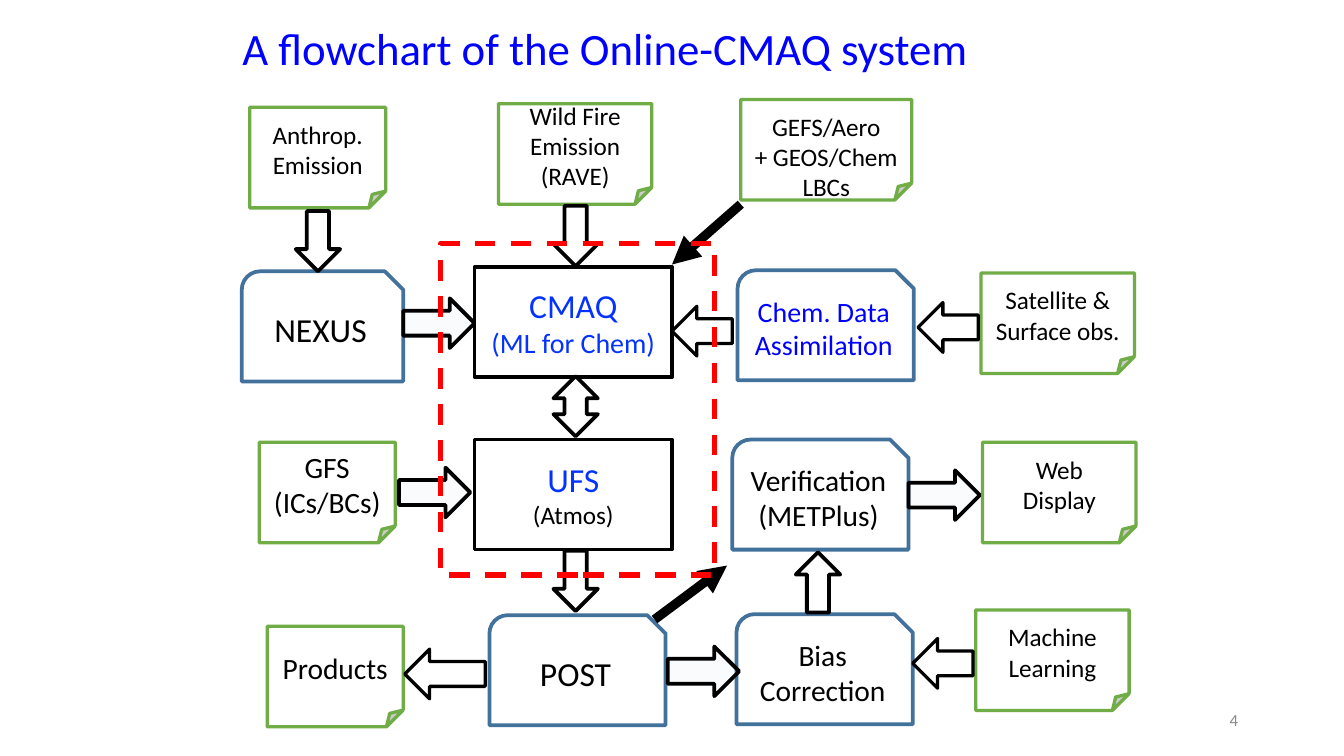
from lxml import etree
from pptx import Presentation
from pptx import util as u
from pptx.dml import color
from pptx.enum import dml, shapes, text
from pptx.oxml import ns

COLORS = {
    "black": "000000",
    "white": "FFFFFF",
    "blue": "0000FF",
    "core_blue": "0432FF",
    "process": "42719B",
    "data": "70AD47",
    "tint": "5B9BD5",
    "boundary": "FF0000",
    "number": "888888",
}
FONT = "Calibri"
SHAPE = shapes.MSO_SHAPE
CENTER = text.PP_ALIGN.CENTER
CORE_SIZE = (3.73, 2.08)
PROCESS_SIZE = (3.33, 2.08)
NARROW, WIDE, NOTE_HEIGHT = 2.57, 2.9, 1.9
VERTICAL_ARROW = (0.84, 1.14)
RIGHT_ARROW = (1.35, 0.94)
LEFT_ARROW = (1.14, 0.94)

CORE_BOXES = [
    ((8.97, 5.05), [("CMAQ", 18, "core_blue"), ("(ML for Chem)", 15, "core_blue")]),
    ((8.97, 8.31), [("UFS", 18, "core_blue"), ("(Atmos)", 13.5, "black")]),
]
PROCESSES = [
    ((4.57, 5.13), (3.05, 2.08), ["NEXUS"], 18, "black"),
    ((13.94, 5.11), PROCESS_SIZE, ["Chem. Data Assimilation"], 15, "blue"),
    ((13.84, 8.31), PROCESS_SIZE, ["Verification", "(METPlus)"], 15.75, "black"),
    ((9.25, 11.63), PROCESS_SIZE, ["POST"], 18, "black"),
    ((13.92, 11.61), PROCESS_SIZE, ["Bias Correction"], 15.75, "black"),
]
NOTES = [
    ((4.72, 2.03), NARROW, ["Anthrop.", "Emission"], 13.5, 0.1),
    ((9.42, 1.96), WIDE, ["Wild Fire", "Emission", "(RAVE)"], 13.5, 0.1),
    ((14, 1.88), 3.23, ["GEFS/Aero", "+ GEOS/Chem", "LBCs"], 13.5, 0.68),
    ((18.54, 5.16), WIDE, ["Satellite &", "Surface obs."], 13.5, 0.1),
    ((4.9, 8.36), NARROW, ["GFS", "(ICs/BCs)"], 15.75, 0.1),
    ((18.57, 8.36), WIDE, ["Web", "Display"], 13.5, 0.1),
    ((5.05, 11.84), NARROW, ["Products"], 15.75, 0.1),
    ((18.44, 11.53), WIDE, ["Machine Learning"], 13.5, 0.1),
]
BLOCK_ARROWS = [
    (SHAPE.DOWN_ARROW, VERTICAL_ARROW, 2, None, [(5.59, 3.99), (10.46, 3.89), (10.46, 10.41)]),
    (SHAPE.UP_ARROW, VERTICAL_ARROW, 2, None, [(15.04, 10.44)]),
    (SHAPE.UP_DOWN_ARROW, VERTICAL_ARROW, 2, "white", [(10.46, 7.11)]),
    (SHAPE.RIGHT_ARROW, RIGHT_ARROW, 2, "tint",
     [(7.62, 5.64), (7.54, 8.84), (17.17, 8.89), (12.62, 12.22)]),
    (SHAPE.LEFT_ARROW, LEFT_ARROW, 1.75, None, [(12.7, 5.79), (17.35, 5.72), (17.25, 12.07)]),
    (SHAPE.LEFT_ARROW, (1.52, 0.94), 1.75, None, [(7.65, 12.27)]),
]
THICK_ARROWS = [((14, 3.86), (12.7, 5)), ((12.37, 11.71), (13.74, 10.69))]


def rgb(name):
    return color.RGBColor.from_string(COLORS[name])


def lengths(*values):
    return [u.Cm(value) for value in values]


def write(shape, lines, alignment=CENTER, anchor=text.MSO_ANCHOR.MIDDLE, top=0.1):
    frame = shape.text_frame
    frame.word_wrap = True
    frame.vertical_anchor = anchor
    frame.margin_left = frame.margin_right = u.Cm(0.19)
    frame.margin_top, frame.margin_bottom = lengths(top, 0.1)
    frame.text = "\n".join(line for line, _, _ in lines)
    for paragraph, (_, size, name) in zip(frame.paragraphs, lines):
        paragraph.alignment = alignment
        paragraph.font.name = FONT
        paragraph.font.size = u.Pt(size)
        paragraph.font.color.rgb = rgb(name)


def add_block(slide, kind, position, size, line, width, fill=None):
    shape = slide.shapes.add_shape(kind, *lengths(*position, *size))
    shape.shadow.inherit = False
    shape.line.color.rgb = rgb(line)
    shape.line.width = u.Pt(width)
    if fill:
        shape.fill.solid()
        shape.fill.fore_color.rgb = rgb(fill)
    else:
        shape.fill.background()
    return shape


def add_block_arrow(slide, kind, position, size, width, fill):
    arrow = add_block(slide, kind, position, size, "black", width, fill)
    if fill == "tint":
        tint = arrow.element.spPr.find(ns.qn("a:solidFill"))[0]
        etree.SubElement(tint, ns.qn("a:alpha"), val="3000")


def add_thick_arrow(slide, start, end):
    arrow = slide.shapes.add_connector(shapes.MSO_CONNECTOR.STRAIGHT, *lengths(*start, *end))
    arrow.line.color.rgb = rgb("black")
    arrow.line.width = u.Pt(5)
    etree.SubElement(arrow.line._get_or_add_ln(), ns.qn("a:tailEnd"), type="triangle")
    etree.SubElement(arrow.element.spPr, ns.qn("a:effectLst"))


def add_title(slide):
    title = slide.shapes.title
    title.left, title.top, title.width, title.height = lengths(4.39, 0.3, 17.73, 1.22)
    write(title, [("A flowchart of the Online-CMAQ system", 24, "blue")],
          text.PP_ALIGN.LEFT, text.MSO_ANCHOR.TOP)
    title.text_frame.auto_size = text.MSO_AUTO_SIZE.SHAPE_TO_FIT_TEXT


def add_boundary(slide):
    boundary = add_block(slide, SHAPE.RECTANGLE, (8.33, 4.6), (5.18, 6.27), "boundary", 2.75)
    boundary.line.dash_style = dml.MSO_LINE.DASH


def add_page_number(slide):
    box = slide.shapes.add_textbox(*lengths(17.93, 13.23, 5.72, 0.76))
    write(box, [("4", 9, "number")], text.PP_ALIGN.RIGHT)
    box.text_frame.margin_right = u.Cm(0.25)


def main():
    presentation = Presentation()
    presentation.slide_width, presentation.slide_height = lengths(25.4, 14.29)
    slide = presentation.slides.add_slide(presentation.slide_layouts[5])
    add_title(slide)
    for position, lines in CORE_BOXES:
        box = add_block(slide, SHAPE.RECTANGLE, position, CORE_SIZE, "black", 2, "white")
        write(box, lines)
    for position, size, lines, points, name in PROCESSES:
        process = add_block(slide, SHAPE.SNIP_ROUND_RECTANGLE, position, size, "process", 2)
        write(process, [(line, points, name) for line in lines])
    for position, width, lines, points, top in NOTES:
        note = add_block(slide, SHAPE.FOLDED_CORNER, position, (width, NOTE_HEIGHT),
                         "data", 1.75, "white")
        write(note, [(line, points, "black") for line in lines], top=top)
    for kind, size, width, fill, positions in BLOCK_ARROWS:
        for position in positions:
            add_block_arrow(slide, kind, position, size, width, fill)
    for start, end in THICK_ARROWS:
        add_thick_arrow(slide, start, end)
    add_boundary(slide)
    add_page_number(slide)
    presentation.save("out.pptx")


if __name__ == "__main__":
    main()
